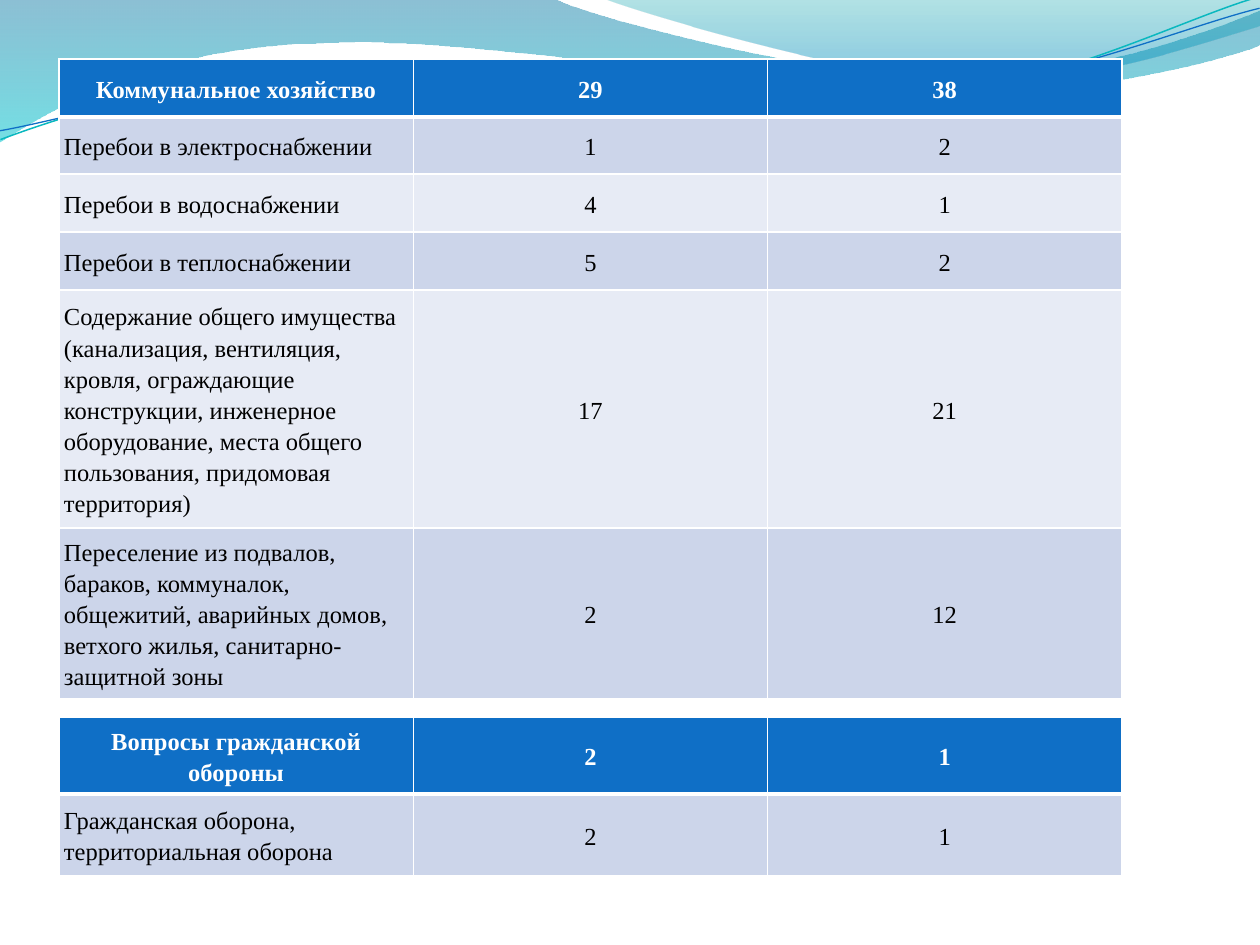
from dataclasses import dataclass
from lxml.etree import SubElement
from pptx import Presentation
from pptx.dml.color import RGBColor as RGB
from pptx.enum.text import MSO_ANCHOR as ANCHOR, PP_ALIGN as ALIGN
from pptx.oxml import parse_xml
from pptx.oxml.ns import nsdecls, qn
from pptx.util import Pt

SCALE = 914400 / 126


@dataclass(frozen=True)
class Theme:
    font: str = "Times New Roman"
    size: int = 14
    spacing: float = 1.15
    header: str = "0F6FC6"
    bands: tuple = ("CCD5EA", "E7EBF5")
    header_text: str = "FFFFFF"
    body_text: str = "000000"
    border: str = "FFFFFF"
    back_wave: tuple = ((0, "0074A1", 45), (1, "00C6CF", 55))
    front_wave: tuple = ((0, "00A1A9", 30), (0.8, "008BBF", 45))
    teal_line: str = "0AB8BF"
    blue_line: str = "0F6FC6"


THEME = Theme()
LINE_TILT = -2.7

BACK_WAVE = [
    (0, 0), (554, -1),
    (600, 21, 837, 79, 955, 79), (1075, 79, 1207, 33, 1260, 11),
    (1261, 45),
    (1239, 55, 1096, 96, 940, 95), (784, 95, 481, 35, 324, 43),
    (163, 45, 58, 105, -1, 142),
]
FRONT_WAVE = [
    (604, -1),
    (641, 14, 859, 78, 969, 82), (1079, 87, 1211, 40, 1260, 26),
    (1260, 0),
]
TEAL_LINE = [
    (-2, 110),
    (59, 90, 200, 52, 350, 53), (499, 53, 745, 118, 896, 114),
    (1049, 109, 1184, 45, 1260, 27),
]
BLUE_LINE = [
    (-2, 101),
    (57, 94, 207, 57, 357, 58), (509, 58, 750, 112, 902, 108),
    (1052, 104, 1188, 52, 1262, 38),
]

HOUSING = [
    ("Коммунальное хозяйство", "29", "38"),
    ("Перебои в электроснабжении", "1", "2"),
    ("Перебои в водоснабжении", "4", "1"),
    ("Перебои в теплоснабжении", "5", "2"),
    ("Содержание общего имущества (канализация, вентиляция, кровля, "
     "ограждающие конструкции, инженерное оборудование, места общего "
     "пользования, придомовая территория)", "17", "21"),
    ("Переселение из подвалов, бараков, коммуналок, общежитий, аварийных "
     "домов, ветхого жилья, санитарно-защитной зоны", "2", "12"),
]
CIVIL_DEFENCE = [
    ("Вопросы гражданской обороны", "2", "1"),
    ("Гражданская оборона, территориальная оборона", "2", "1"),
]


def px(n):
    return round(n * SCALE)


def add_outline(shapes, outline, close):
    points = [(px(x), px(y)) for seg in outline
              for x, y in zip(seg[0::2], seg[1::2])]
    fb = shapes.build_freeform(*points[0], scale=1.0)
    fb.add_line_segments(points[1:], close=close)
    sp = fb.convert_to_shape()
    sp.shadow.inherit = False
    steps = iter(list(sp.element.iter(qn("a:lnTo"))))
    for seg in outline[1:]:
        step = next(steps)
        if len(seg) == 6:
            step.tag = qn("a:cubicBezTo")
            for _ in range(2):
                control = next(steps)
                control.getparent().remove(control)
                step.append(control[0])
    return sp


def add_wave(shapes, outline, stops):
    sp = add_outline(shapes, outline, True)
    sp.line.fill.background()
    sp.fill.gradient()
    sp.fill.gradient_angle = 270
    for stop, (position, color, _) in zip(sp.fill.gradient_stops, stops):
        stop.position = position
        stop.color.rgb = RGB.from_string(color)
    for clr, (_, _, opacity) in zip(sp.element.spPr.iter(qn("a:srgbClr")), stops):
        SubElement(clr, qn("a:alpha"), val=str(opacity * 1000))


def add_curve(shapes, outline, color, width):
    sp = add_outline(shapes, outline, False)
    sp.rotation = LINE_TILT
    sp.fill.background()
    sp.line.color.rgb = RGB.from_string(color)
    sp.line.width = Pt(width)


def set_borders(cell, bottom):
    tcPr = cell._tc.get_or_add_tcPr()
    for i, (side, width) in enumerate(zip("LRTB", (1, 1, 1, bottom))):
        tcPr.insert(i, parse_xml(
            f'<a:ln{side} {nsdecls("a")} w="{Pt(width)}"><a:solidFill>'
            f'<a:srgbClr val="{THEME.border}"/></a:solidFill></a:ln{side}>'))


def fill_cell(cell, text, row, col):
    is_header = row == 0
    color = THEME.header if is_header else THEME.bands[(row - 1) % 2]
    cell.fill.solid()
    cell.fill.fore_color.rgb = RGB.from_string(color)
    cell.vertical_anchor = ANCHOR.MIDDLE
    cell.margin_left = cell.margin_right = px(5)
    cell.margin_top = cell.margin_bottom = px(5)
    cell.text_frame.text = text
    p = cell.text_frame.paragraphs[0]
    p.alignment = ALIGN.CENTER if is_header or col else ALIGN.LEFT
    p.line_spacing = THEME.spacing
    font = p.runs[0].font
    font.name, font.size, font.bold = THEME.font, Pt(THEME.size), is_header
    font.color.rgb = RGB.from_string(
        THEME.header_text if is_header else THEME.body_text)
    set_borders(cell, 3 if is_header else 1)


def add_counts(s, top, rows, heights):
    left, width = 59, 1063
    table = s.shapes.add_table(len(rows), len(rows[0]), px(left), px(top),
                               px(width), px(sum(heights))).table
    for row, (values, height) in enumerate(zip(rows, heights)):
        table.rows[row].height = px(height)
        for col, text in enumerate(values):
            fill_cell(table.cell(row, col), text, row, col)


def main():
    prs = Presentation()
    prs.slide_width, prs.slide_height = px(1260), px(945)
    s = prs.slides.add_slide(prs.slide_layouts[6])
    add_wave(s.shapes, BACK_WAVE, THEME.back_wave)
    add_wave(s.shapes, FRONT_WAVE, THEME.front_wave)
    lines = s.shapes.add_group_shape().shapes
    add_curve(lines, TEAL_LINE, THEME.teal_line, 0.85)
    add_curve(lines, BLUE_LINE, THEME.blue_line, 0.75)
    add_counts(s, 59, HOUSING, [58, 57, 58, 58, 238, 171])
    add_counts(s, 717, CIVIL_DEFENCE, [77, 82])
    prs.save("out.pptx")


if __name__ == "__main__":
    main()
